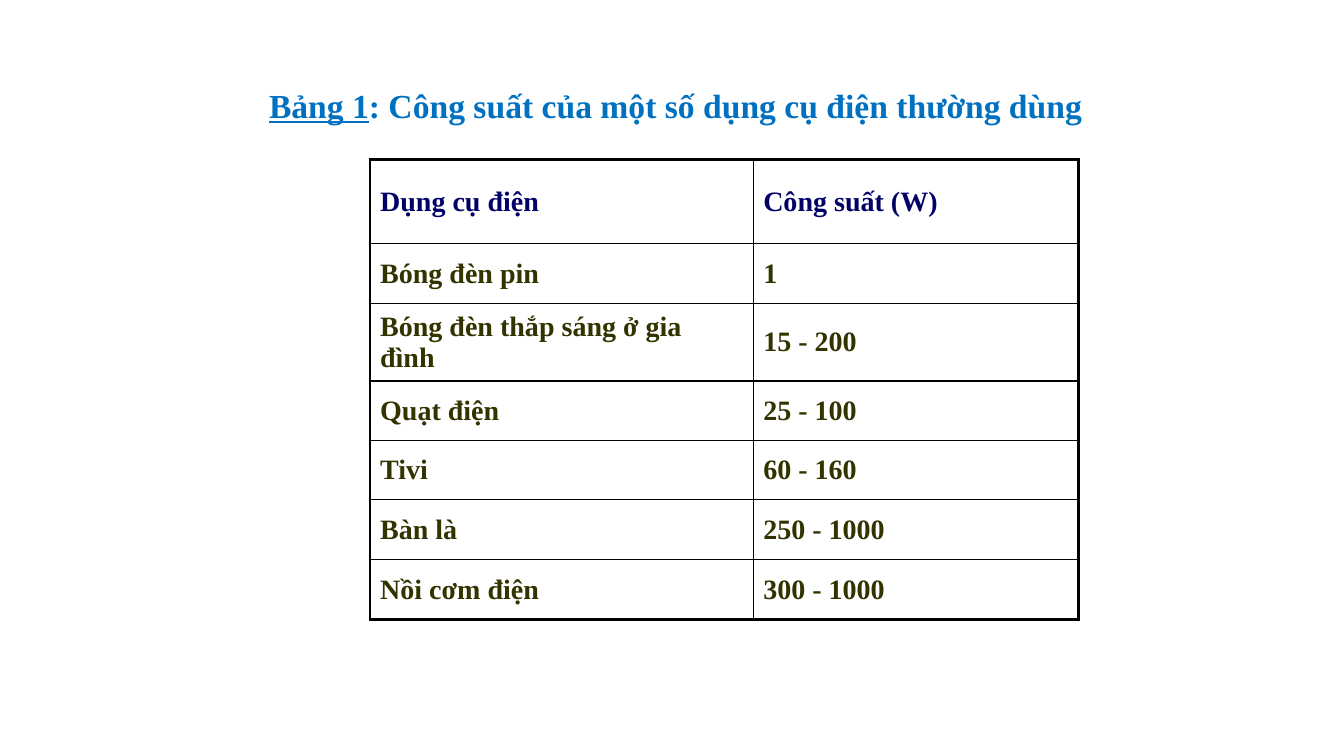
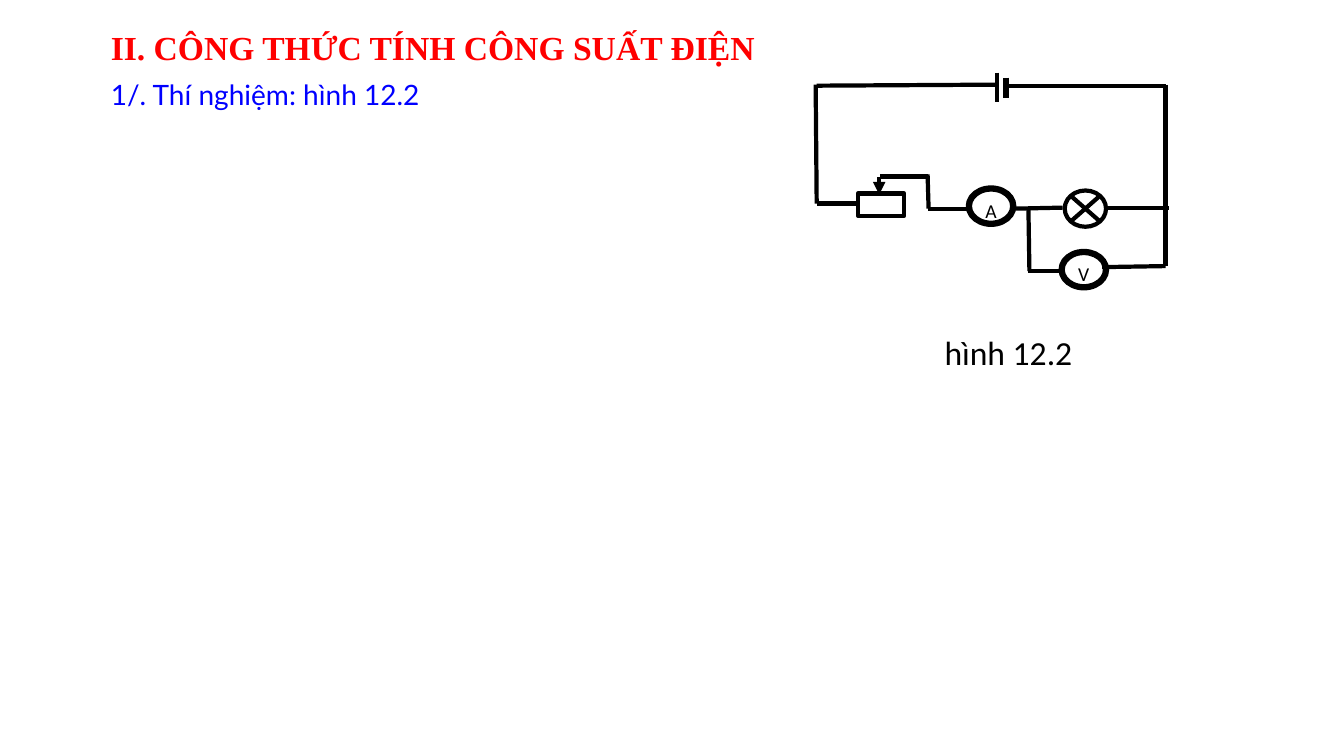
from typing import NamedTuple

from lxml.etree import SubElement
from pptx import Presentation
from pptx.dml.color import RGBColor
from pptx.enum.shapes import MSO_CONNECTOR as Connector, MSO_SHAPE as Preset
from pptx.enum.text import MSO_ANCHOR as Anchor, PP_ALIGN as Align
from pptx.oxml.ns import qn
from pptx.util import Inches, Pt

# Shared style
SERIF = "Times New Roman"
BLACK, WHITE = "000000", "FFFFFF"
TITLE_BLUE, TITLE_RED, LINK_BLUE = "0070C0", "FF0000", "0000FF"
HEADER_NAVY, BODY_OLIVE = "000066", "333300"
THIN, THICK = 1, 2.25
WIRE, METER = 3, 4.5


class TextStyle(NamedTuple):
    size: float
    font: str
    color: str
    bold: bool = False


class Box(NamedTuple):
    left: float
    top: float
    width: float
    height: float


class Wire(NamedTuple):
    x1: float
    y1: float
    x2: float
    y2: float
    weight: float = WIRE
    arrow: bool = False


class Part(NamedTuple):
    preset: Preset
    box: Box
    weight: float = WIRE
    label: str = ""


TITLE = TextStyle(24, SERIF, TITLE_BLUE, True)
SECTION = TITLE._replace(color=TITLE_RED)
SUBTITLE = TextStyle(20, "Lato", LINK_BLUE)
CAPTION = TextStyle(24, "Calibri", BLACK)
METER_LABEL = TextStyle(14, "Calibri", BLACK)
TABLE_HEADER = TextStyle(20, SERIF, HEADER_NAVY, True)
TABLE_BODY = TABLE_HEADER._replace(color=BODY_OLIVE)

# Table content
TABLE_BOX = Box(3.67, 1.58, 7.03, 4.58)
COLUMN_WIDTHS = (3.8, 3.23)
ROW_HEIGHTS = (0.84, 0.59, 0.77, 0.59, 0.59, 0.59, 0.6)
POWER_ROWS = (
    ("Dụng cụ điện", "Công suất (W)"),
    ("Bóng đèn pin", "1"),
    ("Bóng đèn thắp sáng ở gia đình", "15 - 200"),
    ("Quạt điện", "25 - 100"),
    ("Tivi", "60 - 160"),
    ("Bàn là", "250 - 1000"),
    ("Nồi cơm điện", "300 - 1000"),
)

# Circuit content
WIRES = (
    # Battery and outer loop
    Wire(8.1, 0.85, 9.88, 0.84),
    Wire(9.89, 0.72, 9.89, 1.01),
    Wire(9.98, 0.77, 9.98, 0.97, METER),
    Wire(9.98, 0.85, 11.56, 0.85),
    Wire(11.56, 0.84, 11.56, 2.64),
    Wire(8.09, 0.84, 8.1, 2.02),
    # Rheostat and its slider
    Wire(8.1, 2.02, 8.51, 2.02),
    Wire(8.72, 1.76, 8.72, 1.93, arrow=True),
    Wire(8.73, 1.75, 9.2, 1.75),
    Wire(9.2, 1.73, 9.21, 2.07),
    Wire(9.2, 2.07, 9.61, 2.07),
    # Lamp branch
    Wire(10.07, 2.07, 10.54, 2.06),
    Wire(10.97, 2.06, 11.59, 2.06),
    # Voltmeter branch
    Wire(10.2, 2.07, 10.21, 2.69),
    Wire(10.2, 2.69, 10.55, 2.69),
    Wire(10.93, 2.65, 11.56, 2.64),
)
PARTS = (
    Part(Preset.RECTANGLE, Box(8.51, 1.92, 0.46, 0.22)),
    Part(Preset.OVAL, Box(9.61, 1.87, 0.44, 0.35), METER, "A"),
    Part(Preset.FLOWCHART_SUMMING_JUNCTION, Box(10.56, 1.89, 0.41, 0.36)),
    Part(Preset.OVAL, Box(10.53, 2.5, 0.44, 0.35), METER, "V"),
)


def rgb(color: str) -> RGBColor:
    return RGBColor.from_string(color)


def inches(lengths) -> list:
    return [Inches(length) for length in lengths]


def format_run(run, style: TextStyle) -> None:
    run.font.size = Pt(style.size)
    run.font.name = style.font
    run.font.bold = style.bold
    run.font.color.rgb = rgb(style.color)


def set_text(text_frame, text: str, style: TextStyle) -> None:
    text_frame.text = text
    format_run(text_frame.paragraphs[0].runs[0], style)


def add_text(slide, box: Box, text: str, style: TextStyle, wrap: bool = True):
    text_frame = slide.shapes.add_textbox(*inches(box)).text_frame
    text_frame.word_wrap = wrap
    set_text(text_frame, text, style)
    return text_frame.paragraphs[0]


def add_wire(slide, wire: Wire) -> None:
    ends = inches((wire.x1, wire.y1, wire.x2, wire.y2))
    connector = slide.shapes.add_connector(Connector.STRAIGHT, *ends)
    connector.line.color.rgb = rgb(BLACK)
    connector.line.width = Pt(wire.weight)
    if wire.arrow:
        SubElement(connector.line._get_or_add_ln(), qn("a:tailEnd"), type="triangle")
    SubElement(connector._element.spPr, qn("a:effectLst"))


def add_part(slide, part: Part) -> None:
    shape = slide.shapes.add_shape(part.preset, *inches(part.box))
    shape.shadow.inherit = False
    shape.fill.background()
    shape.line.color.rgb = rgb(BLACK)
    shape.line.width = Pt(part.weight)
    if part.label:
        set_text(shape.text_frame, part.label, METER_LABEL)
        shape.text_frame.vertical_anchor = Anchor.TOP
        shape.text_frame.paragraphs[0].alignment = Align.CENTER


def set_borders(cell, outer_edges: dict) -> None:
    properties = cell._tc.get_or_add_tcPr()
    for side, outer in outer_edges.items():
        width = Pt(THICK if outer else THIN)
        line = SubElement(properties, qn(f"a:ln{side}"), w=str(width))
        fill = SubElement(line, qn("a:solidFill"))
        SubElement(fill, qn("a:srgbClr"), val=BLACK)


def add_power_table(slide) -> None:
    last_row, last_column = len(POWER_ROWS) - 1, len(COLUMN_WIDTHS) - 1
    frame = slide.shapes.add_table(last_row + 1, last_column + 1, *inches(TABLE_BOX))
    table = frame.table
    table.first_row = table.horz_banding = False
    for column, width in zip(table.columns, COLUMN_WIDTHS):
        column.width = Inches(width)
    for row, height in zip(table.rows, ROW_HEIGHTS):
        row.height = Inches(height)

    for r, texts in enumerate(POWER_ROWS):
        for c, text in enumerate(texts):
            cell = table.cell(r, c)
            set_text(cell.text_frame, text, TABLE_BODY if r else TABLE_HEADER)
            cell.vertical_anchor = Anchor.MIDDLE
            set_borders(cell, {"L": c == 0, "R": c == last_column,
                               "T": r == 0, "B": r == last_row})
            cell.fill.solid()
            cell.fill.fore_color.rgb = rgb(WHITE)


def build_power_slide(slide) -> None:
    add_power_table(slide)
    title = add_text(slide, Box(2.57, 0.79, 9.87, 0.5), "Bảng 1", TITLE)
    title.runs[0].font.underline = True
    rest = title.add_run()
    rest.text = ": Công suất của một số dụng cụ điện thường dùng"
    format_run(rest, TITLE)


def build_circuit_slide(slide) -> None:
    section = add_text(slide, Box(1, 0.3, 8.99, 0.42),
                       "II. CÔNG THỨC TÍNH CÔNG SUẤT ĐIỆN", SECTION)
    section.line_spacing = 0.8
    add_text(slide, Box(1, 0.72, 4.62, 0.44), "1/. Thí nghiệm: hình 12.2", SUBTITLE)
    for wire in WIRES:
        add_wire(slide, wire)
    for part in PARTS:
        add_part(slide, part)
    add_text(slide, Box(9.27, 3.24, 1.56, 0.5), "hình 12.2", CAPTION, wrap=False)


def main() -> None:
    presentation = Presentation()
    presentation.slide_width, presentation.slide_height = Inches(13.33), Inches(7.5)
    blank = presentation.slide_layouts[6]
    for build in (build_power_slide, build_circuit_slide):
        build(presentation.slides.add_slide(blank))
    presentation.save("out.pptx")


if __name__ == "__main__":
    main()
